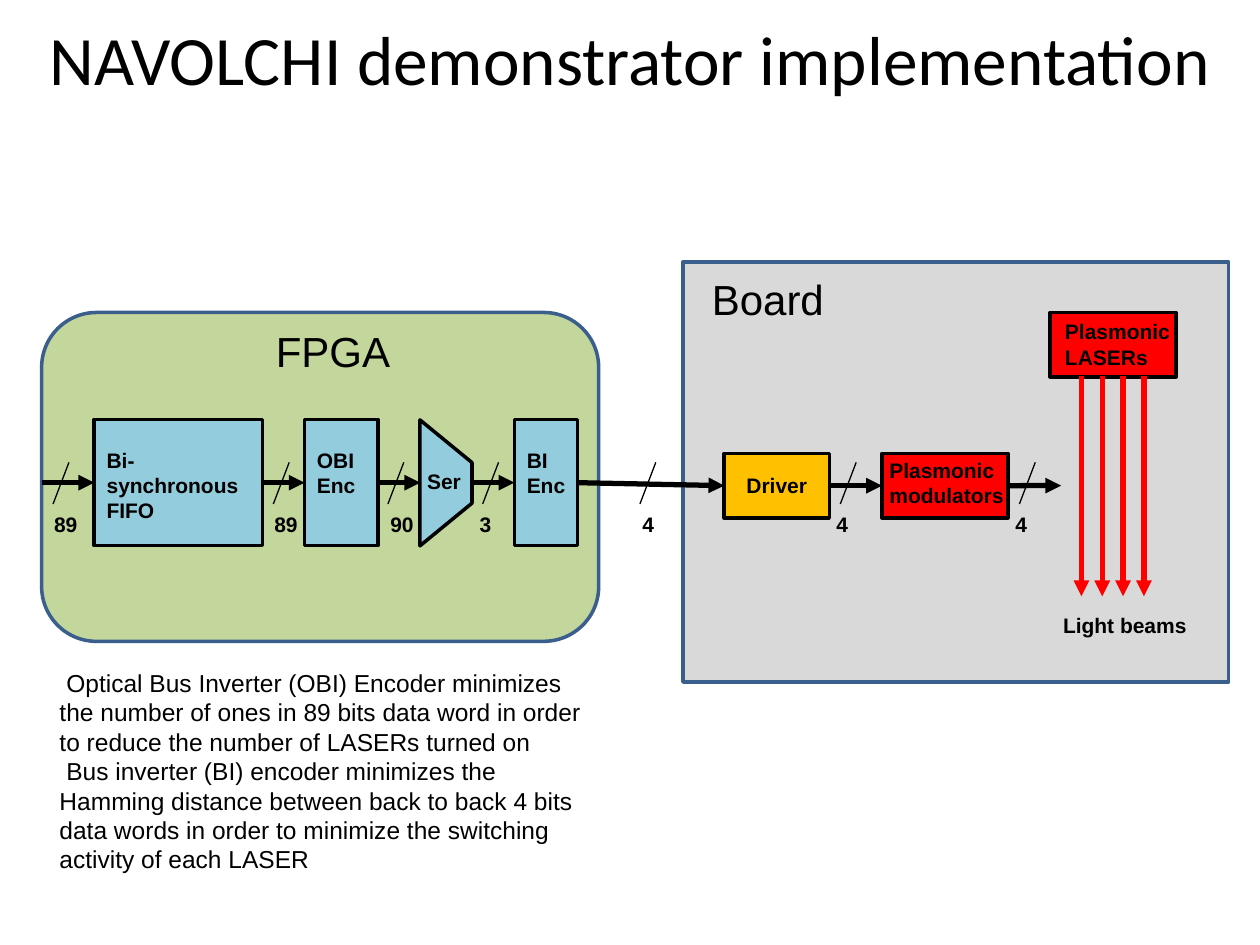
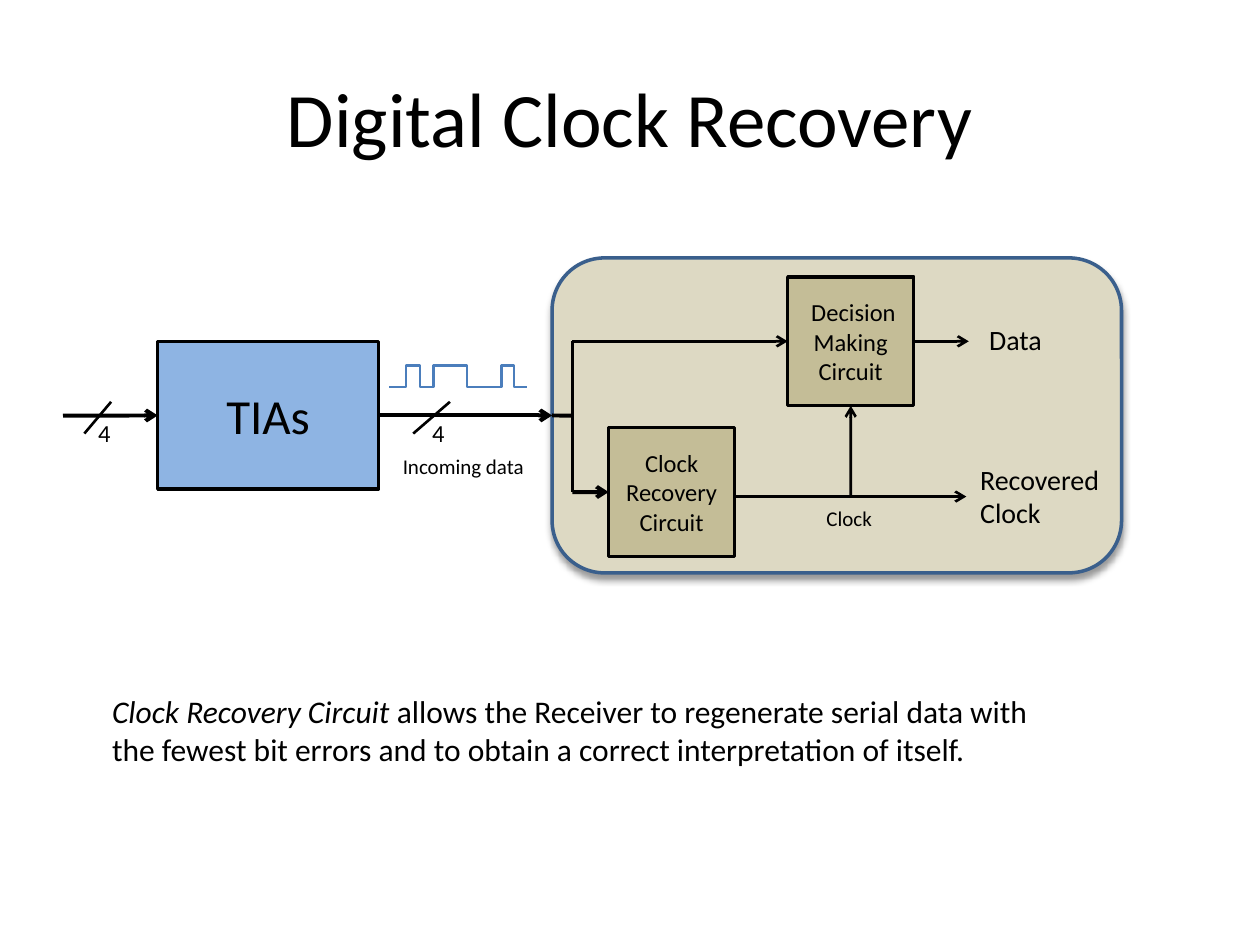
from dataclasses import dataclass

from lxml.etree import SubElement
from pptx import Presentation
from pptx.dml.color import RGBColor
from pptx.enum.shapes import MSO_CONNECTOR, MSO_SHAPE
from pptx.enum.text import MSO_ANCHOR, PP_ALIGN
from pptx.oxml.ns import qn
from pptx.util import Cm, Pt

TOP, LEFT, BOTTOM, RIGHT = range(4)


@dataclass(frozen=True)
class Theme:
    # Colours
    ink: str = "000000"
    frame: str = "3A5F8C"
    fpga: str = "C3D69B"
    logic: str = "93CDDD"
    board: str = "D9D9D9"
    driver: str = "FFC000"
    optics: str = "FF0000"
    amplifier: str = "8EB4E3"
    receiver: str = "DDD9C3"
    circuit: str = "C4BD97"
    signal: str = "4B7EBC"
    # Fonts and type sizes
    title_font: str = "Calibri"
    small: float = 12
    body: float = 14
    output: float = 16
    note: float = 18
    heading: float = 24
    large: float = 28
    # Line widths
    outline: float = 2
    hairline: float = 0.75
    thin: float = 1.5
    medium: float = 2.25
    thick: float = 3


class Deck:
    """Holds the style and the slide being drawn; positions are in centimetres."""

    def __init__(self, theme):
        self.theme = theme
        self.presentation = Presentation()
        self.presentation.slide_width = Cm(25.4)
        self.presentation.slide_height = Cm(19.05)
        self.shapes = None
        self.font = theme.title_font

    def new_slide(self, title, box, size, font):
        blank = self.presentation.slide_layouts[6]
        self.shapes = self.presentation.slides.add_slide(blank).shapes
        self.font = self.theme.title_font
        heading = self.label(title, *box, size=size, align=PP_ALIGN.CENTER)
        heading.text_frame.vertical_anchor = MSO_ANCHOR.MIDDLE
        self.font = font

    def style(self, frame, size, bold=False, align=PP_ALIGN.LEFT):
        frame.word_wrap = True
        for paragraph in frame.paragraphs:
            paragraph.alignment = align
            for run in paragraph.runs:
                run.font.name = self.font
                run.font.size = Pt(size)
                run.font.bold = bold
                run.font.color.rgb = RGBColor.from_string(self.theme.ink)

    def label(self, text, x, y, width, height, size, bold=False,
              align=PP_ALIGN.LEFT):
        box = self.shapes.add_textbox(Cm(x), Cm(y), Cm(width), Cm(height))
        box.text_frame.text = text
        self.style(box.text_frame, size, bold, align)
        return box

    def outline(self, shape, color, width):
        shape.shadow.inherit = False
        shape.line.color.rgb = RGBColor.from_string(color)
        shape.line.width = Pt(width)

    def area(self, kind, x, y, width, height, fill, line=None):
        area = self.shapes.add_shape(kind, Cm(x), Cm(y), Cm(width), Cm(height))
        area.fill.solid()
        area.fill.fore_color.rgb = RGBColor.from_string(fill)
        self.outline(area, line or self.theme.ink, self.theme.outline)
        return area

    def block(self, text, x, y, width, height, fill, size, bold=False,
              inset=None):
        """Rectangle with centred text, or text set from an inset (left, top)."""
        block = self.area(MSO_SHAPE.RECTANGLE, x, y, width, height, fill)
        frame = block.text_frame
        frame.text = text
        if inset:
            frame.vertical_anchor = MSO_ANCHOR.TOP
            frame.margin_left, frame.margin_top = Cm(inset[0]), Cm(inset[1])
            frame.margin_right = 0
            self.style(frame, size, bold)
        else:
            frame.vertical_anchor = MSO_ANCHOR.MIDDLE
            self.style(frame, size, bold, PP_ALIGN.CENTER)
        return block

    def line(self, start, end, width, color=None, head=None):
        """Straight line; each end is a point (x, y) or a joint (shape, side)."""
        joined = [not isinstance(place[0], (int, float)) for place in (start, end)]
        points = [(0, 0) if joint else place
                  for joint, place in zip(joined, (start, end))]
        line = self.shapes.add_connector(
            MSO_CONNECTOR.STRAIGHT, *(Cm(v) for point in points for v in point))
        if joined[0]:
            line.begin_connect(*start)
        if joined[1]:
            line.end_connect(*end)
        line.line.color.rgb = RGBColor.from_string(color or self.theme.ink)
        line.line.width = Pt(width)
        if head:
            SubElement(line.line._get_or_add_ln(), qn("a:tailEnd"), type=head)
        SubElement(line._element.spPr, qn("a:effectLst"))

    def polyline(self, points, width, color):
        builder = self.shapes.build_freeform(
            *(Cm(v) for v in points[0]), scale=1.0)
        builder.add_line_segments(
            [(Cm(x), Cm(y)) for x, y in points[1:]], close=False)
        wave = builder.convert_to_shape()
        wave.fill.background()
        self.outline(wave, color, width)

    def cast_shadow(self, shape):
        effects = shape._element.spPr.find(qn("a:effectLst"))
        shadow = SubElement(effects, qn("a:outerShdw"), blurRad=str(Pt(4)),
                            dist=str(Pt(3)), dir="5400000", rotWithShape="0")
        color = SubElement(shadow, qn("a:srgbClr"), val=self.theme.ink)
        SubElement(color, qn("a:alpha"), val="40000")


def draw_demonstrator(deck):
    t = deck.theme
    deck.new_slide("NAVOLCHI demonstrator implementation",
                   (0, 0, 25.4, 2.34), 39.6, "Arial")

    # FPGA and board areas
    deck.area(MSO_SHAPE.ROUNDED_RECTANGLE, 0.84, 6.3, 11.23, 6.63, t.fpga, t.frame)
    deck.label("FPGA", 5.31, 6.43, 3.18, 1.17, t.heading)
    deck.area(MSO_SHAPE.RECTANGLE, 13.77, 5.28, 11, 8.47, t.board, t.frame)
    deck.label("Board", 14.1, 5.38, 3.15, 1.17, t.heading)

    # Encoder chain
    fifo, obi, bi = [
        deck.block(text, x, 8.46, width, 2.54, t.logic, t.small, True, (0.25, 0.56))
        for text, x, width in (("Bi-synchronous FIFO", 1.9, 3.39),
                               ("OBI Enc", 6.14, 1.48),
                               ("BI\nEnc", 10.37, 1.27))]
    serializer = deck.area(MSO_SHAPE.TRAPEZOID, 7.72, 9.21, 2.54, 1.05, t.logic)
    serializer.rotation = 90
    serializer.adjustments[0] = 0.82
    deck.label("Ser", 8.36, 9.32, 1.27, 0.71, t.small, True)

    # Board components
    driver = deck.block("Driver", 14.6, 9.14, 2.12, 1.3, t.driver, t.small, True)
    modulators = deck.block("Plasmonic modulators", 17.78, 9.14, 2.54, 1.3,
                            t.optics, t.small, True, (0.15, 0.08))
    deck.block("Plasmonic LASERs", 21.17, 6.3, 2.54, 1.3,
               t.optics, t.small, True, (0.3, 0.13))

    # Data path
    for start, end in (((0.84, 9.73), (fifo, LEFT)),
                       ((fifo, RIGHT), (obi, LEFT)),
                       ((obi, RIGHT), (8.47, 9.73)),
                       ((9.51, 9.73), (bi, LEFT)),
                       ((bi, RIGHT), (driver, LEFT)),
                       ((driver, RIGHT), (modulators, LEFT)),
                       ((modulators, RIGHT), (21.39, 9.79))):
        deck.line(start, end, t.thick, head="triangle")

    # Bus widths
    for slash_x, bits_x, bits in ((1.07, 0.84, "89"), (5.51, 5.28, "89"),
                                  (7.82, 7.62, "90"), (9.73, 9.42, "3"),
                                  (12.9, 12.7, "4"), (16.94, 16.61, "4"),
                                  (20.55, 20.22, "4")):
        deck.line((slash_x, 10.16), (slash_x + 0.32, 9.32), t.hairline)
        deck.label(bits, bits_x, 10.19, 1.2, 0.71, t.small, True)

    # Light beams
    for beam in range(4):
        x = 21.8 + 0.42 * beam
        deck.line((x, 7.58), (x, 12.02), t.thick, t.optics, "triangle")
    deck.label("Light beams", 21.18, 12.22, 3.5, 0.71, t.small, True)

    # Explanation
    deck.label(" Optical Bus Inverter (OBI) Encoder minimizes the number of ones "
               "in 89 bits data word in order to reduce the number of LASERs "
               "turned on\n"
               " Bus inverter (BI) encoder minimizes the Hamming distance between "
               "back to back 4 bits data words in order to minimize the switching "
               "activity of each LASER",
               0.95, 13.34, 11.13, 4.14, t.body)


def draw_clock_recovery(deck):
    t = deck.theme
    deck.new_slide("Digital Clock Recovery", (1.27, 0.76, 22.86, 3.18), 44, "Calibri")

    # Receiver blocks
    tias = deck.block("TIAs", 3.18, 6.89, 4.45, 2.97, t.amplifier, t.large)
    receiver = deck.area(MSO_SHAPE.ROUNDED_RECTANGLE, 11.13, 5.2, 11.48, 6.35,
                         t.receiver, t.frame)
    deck.cast_shadow(receiver)
    recovery = deck.block("Clock Recovery Circuit", 12.27, 8.62, 2.54, 2.6,
                          t.circuit, t.body)
    decision = deck.block(" Decision Making Circuit", 15.88, 5.58, 2.54, 2.6,
                          t.circuit, t.body)

    # Incoming data
    deck.line((1.27, 8.38), (tias, LEFT), t.medium, head="arrow")
    deck.line((tias, RIGHT), (receiver, LEFT), t.medium, head="arrow")
    for slash_x, slash_width, bits_x in ((1.7, 0.54, 1.73), (8.33, 0.74, 8.46)):
        deck.line((slash_x, 8.74), (slash_x + slash_width, 8.1), t.thin)
        deck.label("4", bits_x, 8.31, 1, 0.86, t.body)
    deck.label("Incoming data", 7.87, 9.02, 3.18, 0.76, t.small)

    # Data waveform: the level flips at every edge
    low, high = 7.8, 7.37
    waveform = [(7.85, low)]
    for number, edge in enumerate((8.18, 8.46, 8.74, 9.42, 10.11, 10.36)):
        levels = (high, low) if number % 2 else (low, high)
        waveform += [(edge, level) for level in levels]
    deck.polyline(waveform + [(10.62, low)], 1.25, t.signal)

    # Split towards both circuits
    split_x, data_y, recovery_y, clock_y = 11.54, 6.88, 9.92, 10.01
    deck.line((receiver, LEFT), (split_x, 8.38), t.medium)
    deck.line((split_x, data_y), (split_x, recovery_y), t.thin)
    deck.line((split_x, recovery_y), (recovery, LEFT), t.medium, head="arrow")
    deck.line((split_x, data_y), (decision, LEFT), t.thin, head="arrow")

    # Outputs
    deck.line((decision, RIGHT), (19.53, data_y), t.thin, head="arrow")
    deck.line((14.81, clock_y), (19.48, clock_y), t.thin, head="arrow")
    deck.line((17.15, clock_y), (decision, BOTTOM), t.thin, head="arrow")
    deck.label("Clock", 16.41, 10.06, 2, 0.76, t.small)
    deck.label("Recovered\nClock", 19.51, 9.19, 3.2, 1.63, t.output)
    deck.label("Data", 19.69, 6.37, 2, 0.94, t.output)

    # Explanation
    purpose = deck.label("Clock Recovery Circuit ", 2.01, 13.82, 19.81, 1.8, t.note)
    sentence = purpose.text_frame.paragraphs[0]
    sentence.runs[0].font.italic = True
    sentence.add_run().text = ("allows the Receiver to regenerate serial data with "
                               "the fewest bit errors and to obtain a correct "
                               "interpretation of itself.")
    deck.style(purpose.text_frame, t.note)


def main():
    deck = Deck(Theme())
    draw_demonstrator(deck)
    draw_clock_recovery(deck)
    deck.presentation.save("out.pptx")


if __name__ == "__main__":
    main()
